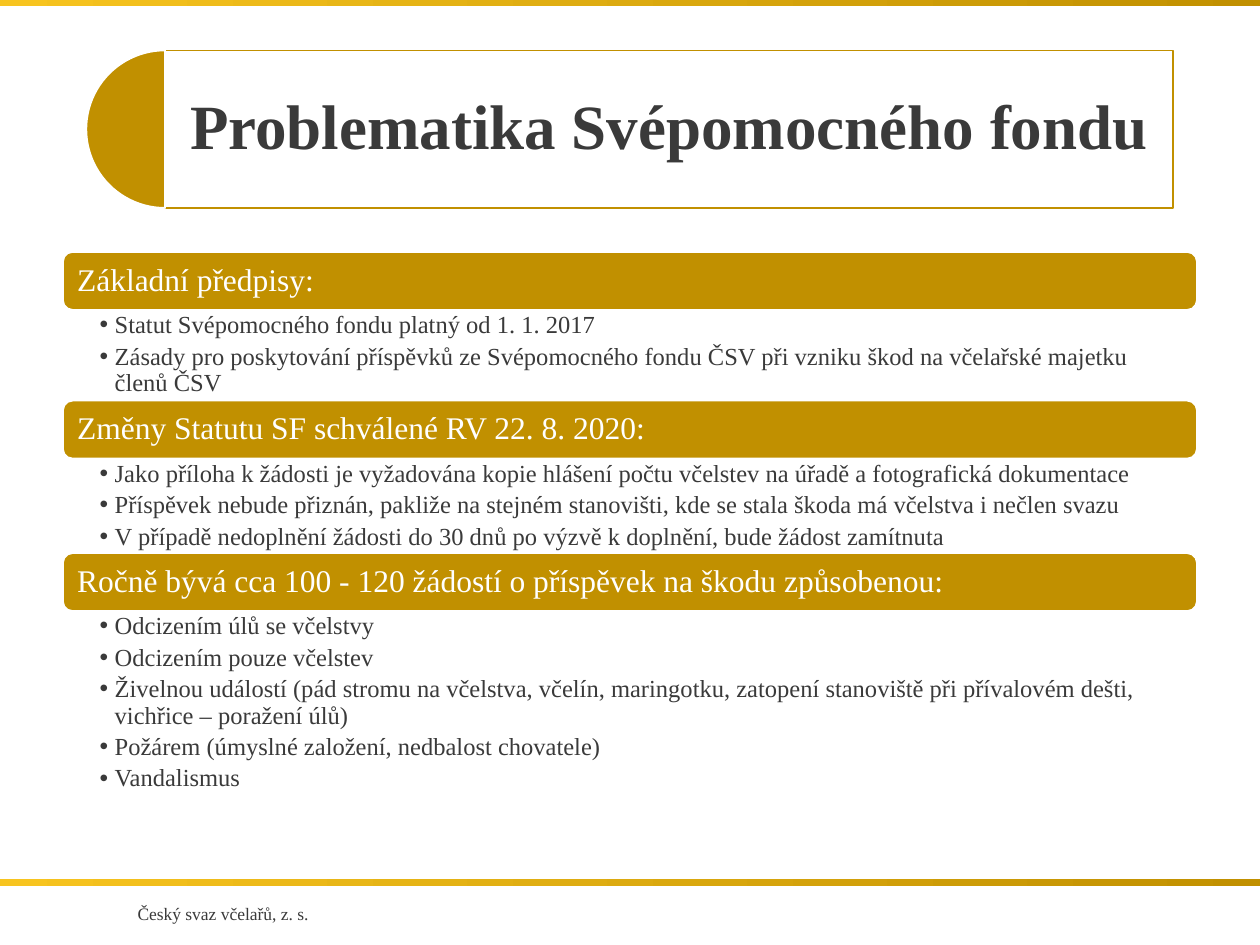
from lxml import etree
from pptx import Presentation
from pptx.dml.color import RGBColor
from pptx.enum.shapes import MSO_SHAPE
from pptx.enum.text import MSO_ANCHOR, MSO_AUTO_SIZE, PP_ALIGN
from pptx.oxml.ns import qn
from pptx.util import Inches, Pt

RECT, PIE, ROUNDED = MSO_SHAPE.RECTANGLE, MSO_SHAPE.PIE, MSO_SHAPE.ROUNDED_RECTANGLE
TOP, MIDDLE = MSO_ANCHOR.TOP, MSO_ANCHOR.MIDDLE
LEFT, CENTER = PP_ALIGN.LEFT, PP_ALIGN.CENTER
NO_FIT = MSO_AUTO_SIZE.NONE

FONT = "Times New Roman"
HONEY, AMBER, INK, WHITE = "C19000", "F7C41F", "3A3A3A", "FFFFFF"

# The grid has 100 columns and 75 rows of square cells
WIDTH, HEIGHT = Inches(10), Inches(7.5)
COLUMN, ROW = WIDTH / 100, HEIGHT / 75
COMPARISON_LAYOUT = 4
BAR_ROWS = 4.6

# Heading, rows taken by its list, list items
SECTIONS = [
    ("Základní předpisy:", 7.2, [
        "Statut Svépomocného fondu platný od 1. 1. 2017",
        "Zásady pro poskytování příspěvků ze Svépomocného fondu ČSV při vzniku škod "
        "na včelařské majetku členů ČSV",
    ]),
    ("Změny Statutu SF schválené RV 22. 8. 2020:", 7.5, [
        "Jako příloha k žádosti je vyžadována kopie hlášení počtu včelstev na úřadě "
        "a fotografická dokumentace",
        "Příspěvek nebude přiznán, pakliže na stejném stanovišti, kde se stala škoda "
        "má včelstva i nečlen svazu",
        "V případě nedoplnění žádosti do 30 dnů po výzvě k doplnění, bude žádost zamítnuta",
    ]),
    ("Ročně bývá cca 100 - 120 žádostí o příspěvek na škodu způsobenou:", 14.7, [
        "Odcizením úlů se včelstvy",
        "Odcizením pouze včelstev",
        "Živelnou událostí (pád stromu na včelstva, včelín, maringotku, zatopení "
        "stanoviště při přívalovém dešti, vichřice – poražení úlů)",
        "Požárem (úmyslné založení, nedbalost chovatele)",
        "Vandalismus",
    ]),
]


def color(value):
    return RGBColor.from_string(value)


def to_lengths(box):
    left, top, width, height = box
    return [int(n) for n in (left * COLUMN, top * ROW, width * COLUMN, height * ROW)]


def place(shape, box):
    shape.left, shape.top, shape.width, shape.height = to_lengths(box)


def paint(shape, fill, line, weight=1):
    shape.fill.solid()
    shape.fill.fore_color.rgb = color(fill)
    shape.line.color.rgb = color(line)
    shape.line.width = Pt(weight)


def add_shape(slide, kind, box):
    shape = slide.shapes.add_shape(kind, *to_lengths(box))
    shape.shadow.inherit = False
    return shape


def add_bullet(paragraph):
    properties = paragraph._p.get_or_add_pPr()
    properties.set("marL", str(Inches(0.12)))
    properties.set("indent", str(-Inches(0.12)))
    bullet_color = etree.SubElement(properties, qn("a:buClr"))
    etree.SubElement(bullet_color, qn("a:srgbClr")).set("val", INK)
    etree.SubElement(properties, qn("a:buFont")).set("typeface", "Arial")
    etree.SubElement(properties, qn("a:buChar")).set("char", "•")


def write(shape, lines, size, ink=INK, bold=False, align=LEFT, anchor=TOP,
          insets=(0.1, 0.05, 0.1, 0.05), spacing=0.9, gap=0, bullets=False):
    frame = shape.text_frame
    frame.word_wrap = True
    frame.auto_size = NO_FIT
    frame.vertical_anchor = anchor
    (frame.margin_left, frame.margin_top,
     frame.margin_right, frame.margin_bottom) = [Inches(n) for n in insets]
    for number, line in enumerate(lines):
        paragraph = frame.add_paragraph() if number else frame.paragraphs[0]
        if bullets:
            add_bullet(paragraph)
        paragraph.alignment = align
        paragraph.line_spacing = spacing
        paragraph.space_before = Pt(gap if number else 0)
        paragraph.space_after = Pt(0)
        run = paragraph.add_run()
        run.text = line
        run.font.name, run.font.size, run.font.bold = FONT, Pt(size), bold
        run.font.color.rgb = color(ink)


def add_band(slide, box):
    band = add_shape(slide, RECT, box)
    band.fill.gradient()
    band.fill.gradient_angle = 180
    for stop, tone in zip(band.fill.gradient_stops, (HONEY, AMBER)):
        stop.color.rgb = color(tone)
    band.line.fill.background()


def add_frame(slide):
    # Bands at the top and above the footer
    for top in (0, 69.8):
        add_band(slide, (0, top, 100, 0.5))
    footer = slide.shapes.add_textbox(*to_lengths((5.4, 71.2, 24.6, 2.7)))
    write(footer, ["Český svaz včelařů, z. s."], 10, align=CENTER, spacing=1)


def add_title(slide, box):
    left, top, width, height = box
    # Half disc whose centre lies on the left edge of the title
    half_disc = add_shape(slide, PIE, (left - height / 2, top, height, height))
    half_disc.adjustments[0], half_disc.adjustments[1] = 54, 162
    paint(half_disc, HONEY, WHITE)
    title = slide.shapes.title
    place(title, box)
    paint(title, WHITE, HONEY)
    write(title, ["Problematika Svépomocného fondu"], 36, bold=True, align=CENTER,
          anchor=MIDDLE, insets=(0.15,) * 4)


def add_section(slide, body, box, heading, items):
    left, top, width, height = box
    bar = add_shape(slide, ROUNDED, (left, top, width, BAR_ROWS))
    paint(bar, HONEY, WHITE)
    write(bar, [heading], 18, ink=WHITE, anchor=MIDDLE, insets=(0.09,) * 4)
    place(body, (left, top + BAR_ROWS, width, height - BAR_ROWS))
    write(body, items, 14, insets=(0.29, 0.02, 0.14, 0.02), gap=2.8, bullets=True)


def main():
    deck = Presentation()
    deck.slide_width, deck.slide_height = WIDTH, HEIGHT
    slide = deck.slides.add_slide(deck.slide_layouts[COMPARISON_LAYOUT])
    _, *bodies = slide.placeholders
    spare = bodies.pop()
    spare.element.getparent().remove(spare.element)

    add_frame(slide)
    add_title(slide, (13.1, 4, 80, 12.5))

    # Sections stacked one below the other
    top = 20
    for body, (heading, list_rows, items) in zip(bodies, SECTIONS):
        rows = BAR_ROWS + list_rows
        add_section(slide, body, (5, top, 90, rows), heading, items)
        top += rows

    deck.save("out.pptx")


if __name__ == "__main__":
    main()
